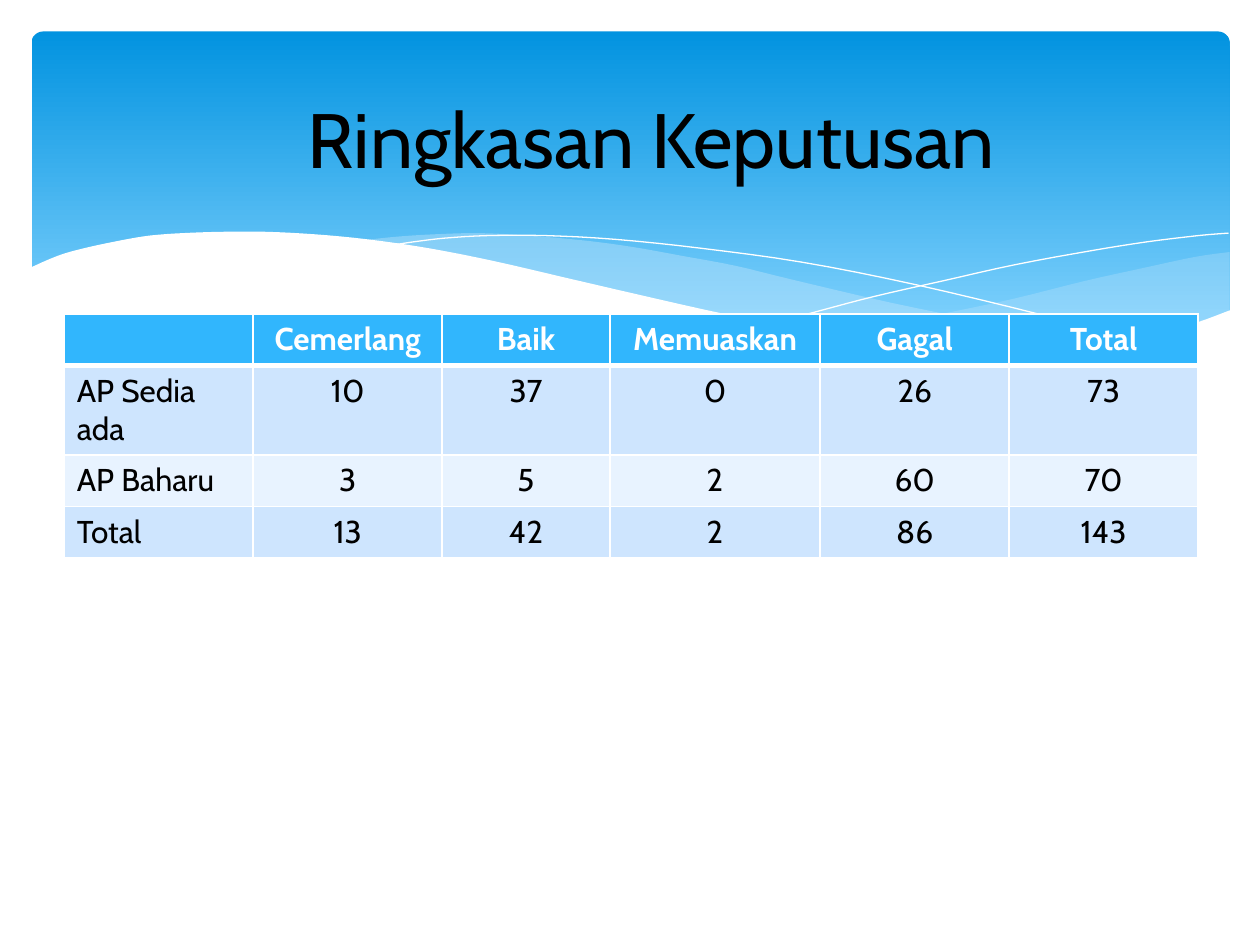
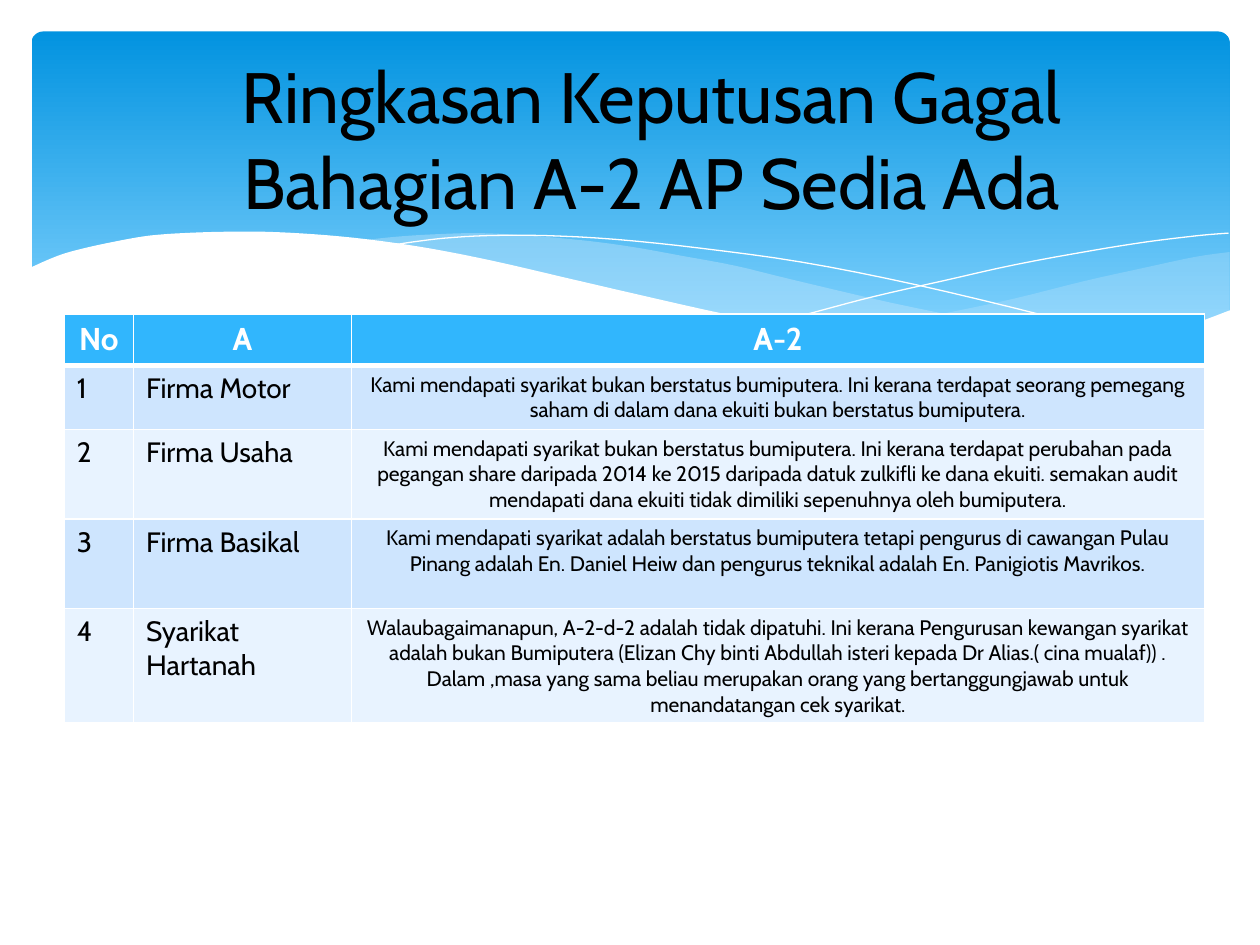
from pptx import Presentation
from pptx.dml.color import RGBColor
from pptx.enum.shapes import MSO_SHAPE as Preset
from pptx.enum.text import MSO_ANCHOR as Anchor, PP_ALIGN as Align
from pptx.oxml.ns import qn
from pptx.util import Inches, Pt
from lxml.etree import SubElement, Element

BLACK = RGBColor(0x00, 0x00, 0x00)
WHITE = RGBColor(0xFF, 0xFF, 0xFF)
BAND_TOP = RGBColor(0x02, 0x93, 0xE0)
BAND_BOTTOM = RGBColor(0x83, 0xD3, 0xFE)
WAVE_BLUE = RGBColor(0xC6, 0xE7, 0xFC)
HEADER_BLUE = RGBColor(0x31, 0xB6, 0xFD)
ROW_FILLS = (RGBColor(0xE8, 0xF3, 0xFF), RGBColor(0xCE, 0xE5, 0xFE))
FONT = "Cabin"

RIGHT_WAVE_TOP = [(9.76, 2), (9.48, 2.04), (9.06, 2.13), (8.61, 2.23), (8.05, 2.37),
                  (7.53, 2.48), (7.06, 2.57), (6.61, 2.65)]
RIGHT_WAVE_BOTTOM = [(6.61, 2.65), (7.05, 2.71), (7.45, 2.75), (7.81, 2.77), (8.14, 2.78),
                     (8.54, 2.76), (8.89, 2.72), (9.21, 2.65), (9.49, 2.57), (9.76, 2.47)]
MIDDLE_WAVE_TOP = [(8.93, 2.73), (8.37, 2.65), (7.75, 2.54), (7.06, 2.4), (6.29, 2.22),
                   (5.84, 2.11), (5.41, 2.03), (5.02, 1.96), (4.65, 1.91), (4.2, 1.87),
                   (3.8, 1.85), (3.44, 1.86), (3.13, 1.88), (2.86, 1.91)]
MIDDLE_WAVE_BOTTOM = [(2.86, 1.91), (3.23, 1.96), (3.62, 2.03), (4.04, 2.11), (4.49, 2.22),
                      (5.3, 2.4), (6.01, 2.55), (6.5, 2.64), (6.95, 2.7), (7.36, 2.75),
                      (7.73, 2.77), (8.07, 2.78), (8.38, 2.78), (8.67, 2.76), (8.93, 2.73)]
FALLING_LINE = [(3.09, 1.95), (3.28, 1.92), (3.53, 1.89), (3.87, 1.87), (4.33, 1.87),
                (4.89, 1.9), (5.56, 1.97), (6.36, 2.08), (7.27, 2.26), (8.31, 2.51), (9.07, 2.72)]
RISING_LINE = [(6.13, 2.57), (6.53, 2.46), (6.95, 2.35), (7.48, 2.23), (8.06, 2.1),
               (8.66, 1.99), (9.1, 1.92), (9.51, 1.87), (9.75, 1.85)]
WHITE_WAVE_TOP = [(9.77, 2.46), (9.5, 2.56), (9.2, 2.65), (8.87, 2.71), (8.5, 2.75),
                  (8.09, 2.77), (7.61, 2.75), (7.08, 2.7), (6.48, 2.62), (5.79, 2.5),
                  (5.03, 2.33), (4.47, 2.2), (3.91, 2.07), (3.4, 1.97), (2.92, 1.9),
                  (2.5, 1.86), (2.11, 1.84), (1.77, 1.84), (1.46, 1.85), (1.19, 1.87),
                  (0.95, 1.91), (0.67, 1.97), (0.46, 2.03), (0.23, 2.13)]
WHITE_WAVE_BASE = [(0.23, 3.29), (9.77, 3.29)]

RESULT_ROWS = [
    ("", "Cemerlang", "Baik", "Memuaskan", "Gagal", "Total"),
    ("AP Sedia ada", "10", "37", "0", "26", "73"),
    ("AP Baharu", "3", "5", "2", "60", "70"),
    ("Total", "13", "42", "2", "86", "143"),
]
FAILURE_ROWS = [
    ("No", "A", "A-2"),
    ("1", "Firma Motor",
     "Kami mendapati syarikat bukan berstatus bumiputera. Ini kerana terdapat seorang "
     "pemegang saham di dalam dana ekuiti bukan berstatus bumiputera."),
    ("2", "Firma Usaha",
     "Kami mendapati syarikat bukan berstatus bumiputera. Ini kerana terdapat perubahan "
     "pada pegangan share daripada 2014 ke 2015 daripada datuk zulkifli ke dana ekuiti. "
     "semakan audit mendapati dana ekuiti tidak dimiliki sepenuhnya oleh bumiputera."),
    ("3", "Firma Basikal",
     "Kami mendapati syarikat adalah berstatus bumiputera tetapi pengurus di cawangan "
     "Pulau Pinang adalah En. Daniel Heiw dan pengurus teknikal adalah En. Panigiotis "
     "Mavrikos."),
    ("4", "Syarikat Hartanah",
     "Walaubagaimanapun, A-2-d-2 adalah tidak dipatuhi. Ini kerana Pengurusan kewangan "
     "syarikat adalah bukan Bumiputera (Elizan Chy binti Abdullah isteri kepada Dr Alias."
     "( cina mualaf)) . Dalam ,masa yang sama beliau merupakan orang yang "
     "bertanggungjawab untuk menandatangan cek syarikat."),
]


def write_paragraph(paragraph, text, size, color=BLACK, bold=False, align=Align.CENTER):
    paragraph.alignment = align
    run = paragraph.add_run()
    run.text = text
    for name, value in {"name": FONT, "size": Pt(size), "bold": bold}.items():
        setattr(run.font, name, value)
    run.font.color.rgb = color


def smooth_curve(points, steps=4):
    padded = [points[0], *points, points[-1]]
    curve = [points[0]]
    for a, b, c, d in zip(padded, padded[1:], padded[2:], padded[3:]):
        for step in range(1, steps + 1):
            t = step / steps
            curve.append(tuple(
                (2 * q + (r - p) * t + (2 * p - 5 * q + 4 * r - s) * t ** 2
                 + (3 * q - p - 3 * r + s) * t ** 3) / 2
                for p, q, r, s in zip(a, b, c, d)))
    return curve


def add_outline(slide, points, close):
    corners = [(Inches(x), Inches(y)) for x, y in points]
    builder = slide.shapes.build_freeform(*corners[0])
    builder.add_line_segments(corners[1:], close=close)
    shape = builder.convert_to_shape()
    shape.shadow.inherit = False
    return shape


def add_wave(slide, points, color, opacity=100):
    shape = add_outline(slide, points, True)
    shape.fill.solid()
    shape.fill.fore_color.rgb = color
    shape.line.fill.background()
    if opacity < 100:
        color_element = shape.fill._xPr.find(qn("a:solidFill"))[0]
        SubElement(color_element, qn("a:alpha"), val=str(opacity * 1000))


def add_hairline(slide, points):
    shape = add_outline(slide, smooth_curve(points), False)
    shape.fill.background()
    shape.line.color.rgb = WHITE
    shape.line.width = Pt(0)


def add_band(slide):
    band = slide.shapes.add_shape(Preset.ROUNDED_RECTANGLE, Inches(0.25), Inches(0.25),
                                  Inches(9.51), Inches(2.7))
    band.adjustments[0] = 0.034
    band.shadow.inherit = False
    band.line.fill.background()
    band.fill.gradient()
    band.fill.gradient_angle = 270
    stops = ((0, BAND_TOP), (0.9, BAND_BOTTOM))
    for stop, (position, color) in zip(band.fill.gradient_stops, stops):
        stop.position = position
        stop.color.rgb = color


def add_background(slide):
    add_band(slide)
    add_wave(slide, smooth_curve(RIGHT_WAVE_TOP) + smooth_curve(RIGHT_WAVE_BOTTOM),
             WAVE_BLUE, 29)
    add_wave(slide, smooth_curve(MIDDLE_WAVE_TOP) + smooth_curve(MIDDLE_WAVE_BOTTOM),
             WAVE_BLUE, 40)
    add_hairline(slide, FALLING_LINE)
    add_hairline(slide, RISING_LINE)
    add_wave(slide, smooth_curve(WHITE_WAVE_TOP) + WHITE_WAVE_BASE, WHITE)


def add_title(slide, lines, size):
    title = slide.shapes.add_textbox(Inches(0.67), Inches(0.47), Inches(9), Inches(1.25))
    frame = title.text_frame
    frame.word_wrap = True
    frame.vertical_anchor = Anchor.MIDDLE
    for index, line in enumerate(lines):
        paragraph = frame.add_paragraph() if index else frame.paragraphs[0]
        write_paragraph(paragraph, line, size)


def set_borders(cell, top, bottom):
    properties = cell._tc.get_or_add_tcPr()
    widths = {"a:lnL": 1, "a:lnR": 1, "a:lnT": top, "a:lnB": bottom}
    for index, (side, width) in enumerate(widths.items()):
        line = Element(qn(side), w=str(Pt(width)))
        fill = SubElement(line, qn("a:solidFill"))
        SubElement(fill, qn("a:srgbClr"), val=str(WHITE))
        properties.insert(index, line)


def add_data_table(slide, rows, widths, heights, sizes, left_columns):
    table = slide.shapes.add_table(len(rows), len(widths), Inches(0.51), Inches(2.49),
                                   Inches(sum(widths)), Inches(sum(heights))).table
    for column, width in zip(table.columns, widths):
        column.width = Inches(width)
    for row, height in zip(table.rows, heights):
        row.height = Inches(height)
    for r, texts in enumerate(rows):
        header = r == 0
        for c, text in enumerate(texts):
            cell = table.cell(r, c)
            cell.fill.solid()
            cell.fill.fore_color.rgb = HEADER_BLUE if header else ROW_FILLS[r % 2]
            set_borders(cell, 3 if r == 1 else 1, 3 if header else 1)
            if text:
                align = Align.LEFT if c < left_columns and not header else Align.CENTER
                write_paragraph(cell.text_frame.paragraphs[0], text,
                                18 if header else sizes[c],
                                WHITE if header else BLACK, header, align)


def add_table_slide(presentation, title_lines, title_size, **table_format):
    slide = presentation.slides.add_slide(presentation.slide_layouts[6])
    add_background(slide)
    add_title(slide, title_lines, title_size)
    add_data_table(slide, **table_format)


def main():
    presentation = Presentation()
    presentation.slide_width = Inches(10)
    presentation.slide_height = Inches(7.5)
    add_table_slide(presentation, ["Ringkasan Keputusan"], 44,
                    rows=RESULT_ROWS, widths=[1.5, 1.5, 1.33, 1.67, 1.5, 1.5],
                    heights=[0.41, 0.71, 0.41, 0.41], sizes=[18] * 6, left_columns=1)
    add_table_slide(presentation, ["Ringkasan Keputusan Gagal", "Bahagian A-2 AP Sedia Ada"],
                    40.7, rows=FAILURE_ROWS, widths=[0.55, 1.73, 6.77],
                    heights=[0.41, 0.51, 0.71, 0.71, 0.91], sizes=[16, 16, 12],
                    left_columns=2)
    presentation.save("out.pptx")


if __name__ == "__main__":
    main()
